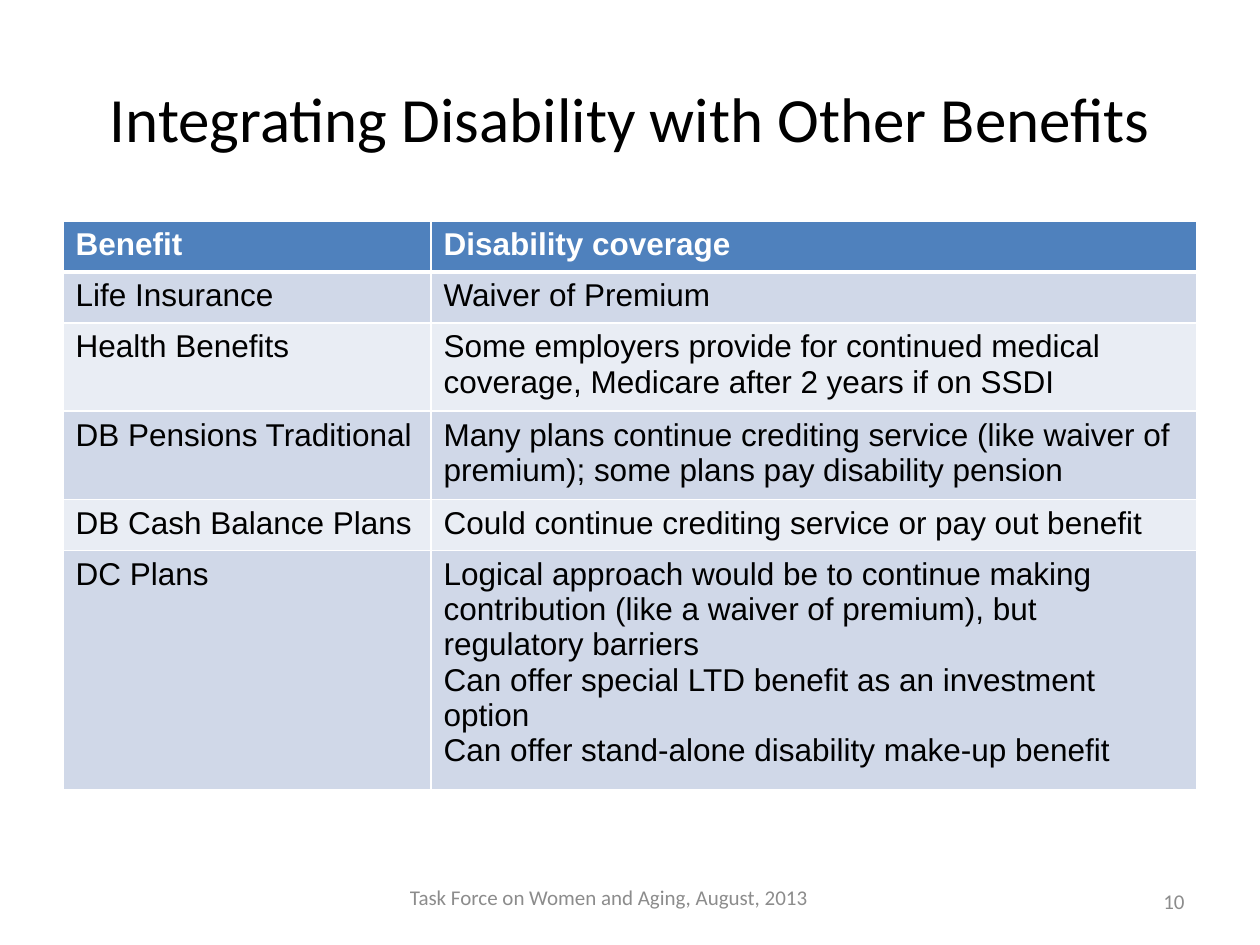
import pptx
import pptx.dml.color
import pptx.enum.text
import pptx.oxml.ns
import pptx.util
from lxml import etree

TITLE = "Integrating Disability with Other Benefits"
ROWS = [
    ("Benefit", ["Disability coverage"]),
    ("Life Insurance", ["Waiver of Premium"]),
    ("Health Benefits", ["Some employers provide for continued medical coverage, "
                         "Medicare after 2 years if on SSDI"]),
    ("DB Pensions Traditional", ["Many plans continue crediting service (like waiver of premium); "
                                 "some plans pay disability pension"]),
    ("DB Cash Balance Plans", ["Could continue crediting service or pay out benefit"]),
    ("DC Plans", ["Logical approach would be to continue making contribution "
                  "(like a waiver of premium), but regulatory barriers",
                  "Can offer special LTD benefit as an investment option",
                  "Can offer stand-alone disability make-up benefit"]),
]
FOOTER = "Task Force on Women and Aging, August, 2013"
PAGE = "10"

THEME = {
    "heading_font": "Calibri", "body_font": "Arial",
    "title_size": 36, "table_size": 18, "footer_size": 12,
    "text": "000000", "muted": "8C8C8C", "white": "FFFFFF",
    "header": "4F81BD", "bands": ("E9EDF4", "D0D8E8"),
    "rule": 1, "header_rule": 3,
}
EMU_PER_PX = 914400 // 126
COLUMNS = (368, 766)
ROW_HEIGHT = 51
ALIGN = pptx.enum.text.PP_ALIGN


def px(n):
    return pptx.util.Emu(n * EMU_PER_PX)


def rgb(value):
    return pptx.dml.color.RGBColor.from_string(value)


def write(tf, lines, font, size, color, align=ALIGN.LEFT, bold=False):
    for i, line in enumerate(lines):
        p = tf.paragraphs[0] if i == 0 else tf.add_paragraph()
        p.alignment = align
        r = p.add_run()
        r.text = line
        r.font.name = font
        r.font.size = pptx.util.Pt(size)
        r.font.bold = bold
        r.font.color.rgb = rgb(color)


def add_label(s, box, text, size, color, align):
    tf = s.shapes.add_textbox(*map(px, box)).text_frame
    tf.word_wrap = True
    tf.vertical_anchor = pptx.enum.text.MSO_ANCHOR.MIDDLE
    write(tf, [text], THEME["heading_font"], size, color, align)


def set_border(cell, side, width):
    qn = pptx.oxml.ns.qn
    ln = etree.SubElement(cell._tc.get_or_add_tcPr(), qn("a:ln" + side),
                          w=str(pptx.util.Pt(width)))
    fill = etree.SubElement(ln, qn("a:solidFill"))
    etree.SubElement(fill, qn("a:srgbClr"), val=THEME["white"])


def add_benefit_table(s):
    box = (63, 221, sum(COLUMNS), ROW_HEIGHT * len(ROWS))
    table = s.shapes.add_table(len(ROWS), len(COLUMNS), *map(px, box)).table
    for column, width in zip(table.columns, COLUMNS):
        column.width = px(width)
    for i, (benefit, coverage) in enumerate(ROWS):
        header = i == 0
        widths = {"L": THEME["rule"], "R": THEME["rule"],
                  "T": THEME["header_rule" if i == 1 else "rule"],
                  "B": THEME["header_rule" if header else "rule"]}
        for j, lines in enumerate(([benefit], coverage)):
            cell = table.cell(i, j)
            for side, width in widths.items():
                set_border(cell, side, width)
            cell.fill.solid()
            cell.fill.fore_color.rgb = rgb(THEME["header"] if header else THEME["bands"][i % 2])
            write(cell.text_frame, lines, THEME["body_font"], THEME["table_size"],
                  THEME["white" if header else "text"], bold=header)


def main():
    prs = pptx.Presentation()
    prs.slide_width, prs.slide_height = px(1260), px(945)
    s = prs.slides.add_slide(prs.slide_layouts[6])
    add_label(s, (63, 38, 1134, 158), TITLE, THEME["title_size"], THEME["text"], ALIGN.CENTER)
    add_benefit_table(s)
    add_label(s, (368, 872, 482, 50), FOOTER, THEME["footer_size"], THEME["muted"], ALIGN.CENTER)
    add_label(s, (903, 876, 294, 50), PAGE, THEME["footer_size"], THEME["muted"], ALIGN.RIGHT)
    prs.save("out.pptx")


if __name__ == "__main__":
    main()
